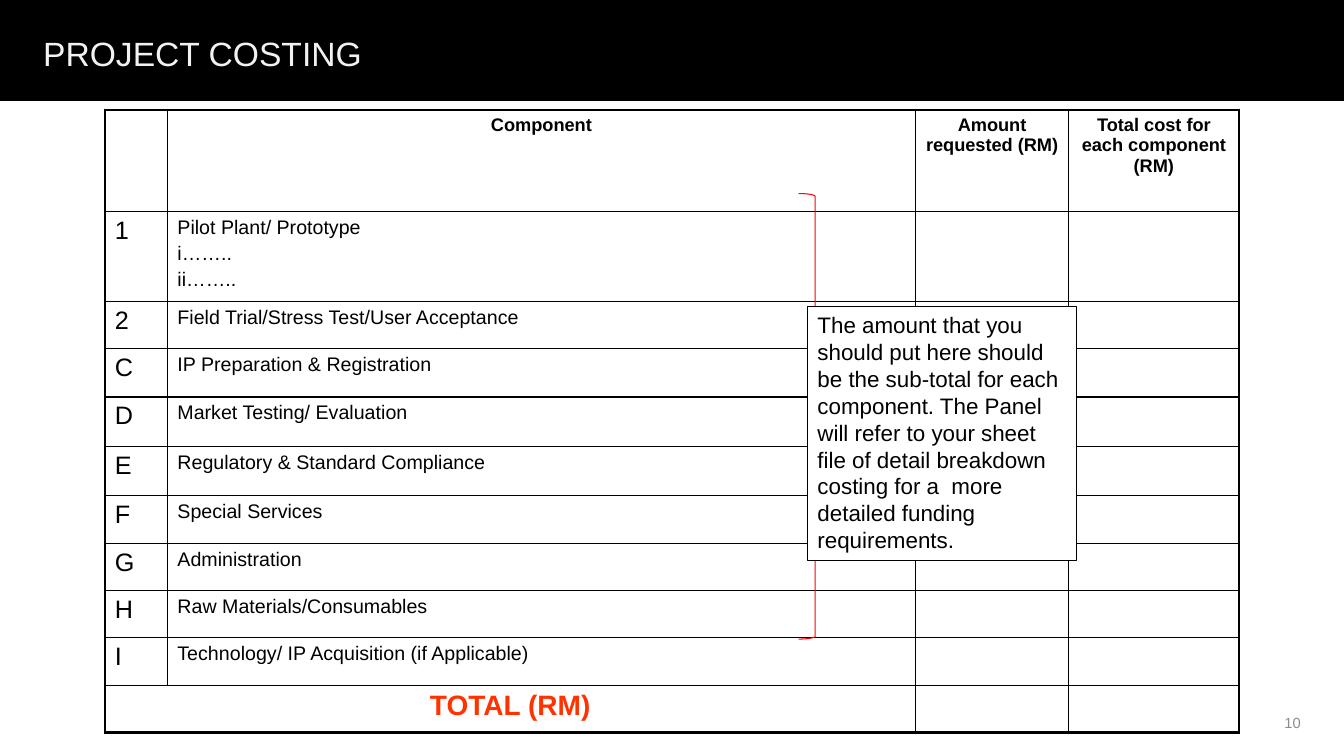
from pptx import Presentation
from pptx.dml.color import RGBColor
from pptx.enum.shapes import MSO_SHAPE as SHAPE
from pptx.enum.text import MSO_ANCHOR as ANCHOR, MSO_AUTO_SIZE as AUTO, PP_ALIGN as ALIGN
from pptx.oxml import parse_xml
from pptx.oxml.ns import nsdecls
from pptx.util import Inches, Pt

COLUMN_WIDTHS = [0.62, 7.42, 1.52, 1.69]
ROW_HEIGHTS = [1.01, 0.89, 0.47, 0.48, 0.49, 0.49] + [0.47] * 5
HEADINGS = ["", "Component", "Amount requested (RM)", "Total cost for each component (RM)"]
COMPONENTS = [
    ("1", "Pilot Plant/ Prototype\ni……..\nii…….."),
    ("2", "Field Trial/Stress Test/User Acceptance"),
    ("C", "IP Preparation & Registration"),
    ("D", "Market Testing/ Evaluation"),
    ("E", "Regulatory & Standard Compliance"),
    ("F", "Special Services"),
    ("G", "Administration"),
    ("H", "Raw Materials/Consumables"),
    ("I", "Technology/ IP Acquisition (if Applicable)"),
]
NOTE = ("The amount that you should put here should be the sub-total for each component. "
        "The Panel will refer to your sheet file of detail breakdown costing for a  more "
        "detailed funding requirements.")


def rgb(color):
    return RGBColor.from_string(color)


def write(tf, text, size=18, color="000000", bold=False, align=ALIGN.LEFT, gap=0):
    for i, line in enumerate(text.split("\n")):
        p = tf.add_paragraph() if i else tf.paragraphs[0]
        p.alignment = align
        if i:
            p.space_before = Pt(gap)
        r = p.add_run()
        r.text = line
        r.font.name = "Arial"
        r.font.size = Pt(size)
        r.font.bold = bold
        r.font.color.rgb = rgb(color)


def add_shape(s, kind, box, line, width=0.75, fill=None):
    sp = s.shapes.add_shape(kind, *map(Inches, box))
    sp.shadow.inherit = False
    sp.line.color.rgb = rgb(line)
    sp.line.width = Pt(width)
    if fill:
        sp.fill.solid()
        sp.fill.fore_color.rgb = rgb(fill)
    else:
        sp.fill.background()
    return sp


def add_text(s, box, text, anchor=ANCHOR.TOP, auto=AUTO.NONE, **fmt):
    tf = s.shapes.add_textbox(*map(Inches, box)).text_frame
    tf.word_wrap = True
    tf.auto_size = auto
    tf.vertical_anchor = anchor
    write(tf, text, **fmt)


def set_borders(cell, outer):
    tc_pr = cell._tc.get_or_add_tcPr()
    for side in "LRTB":
        width = Pt(2.25 if side in outer else 1)
        tc_pr.append(parse_xml(
            f'<a:ln{side} {nsdecls("a")} w="{int(width)}"><a:solidFill>'
            f'<a:srgbClr val="000000"/></a:solidFill></a:ln{side}>'))
    cell.fill.background()


def add_cost_table(s):
    rows, cols = len(ROW_HEIGHTS), len(COLUMN_WIDTHS)
    box = (1.04, 1.09, sum(COLUMN_WIDTHS), sum(ROW_HEIGHTS))
    table = s.shapes.add_table(rows, cols, *map(Inches, box)).table
    table.first_row = table.horz_banding = False
    for column, width in zip(table.columns, COLUMN_WIDTHS):
        column.width = Inches(width)
    for row, height in zip(table.rows, ROW_HEIGHTS):
        row.height = Inches(height)
    for i in range(rows):
        for j in range(cols):
            edges = {"L": j == 0, "R": j == cols - 1, "T": i == 0, "B": i == rows - 1}
            set_borders(table.cell(i, j), [side for side, on in edges.items() if on])
    for j, heading in enumerate(HEADINGS):
        if heading:
            write(table.cell(0, j).text_frame, heading, size=13, bold=True, align=ALIGN.CENTER)
    for i, (label, component) in enumerate(COMPONENTS, 1):
        write(table.cell(i, 0).text_frame, label)
        write(table.cell(i, 1).text_frame, component, size=14, gap=2.8)
    total = table.cell(rows - 1, 0)
    total.merge(table.cell(rows - 1, 1))
    write(total.text_frame, "TOTAL (RM)", size=20, color="FF3300", bold=True, align=ALIGN.CENTER)


def add_note(s):
    brace = add_shape(s, SHAPE.RIGHT_BRACE, (7.92, 1.92, 0.33, 4.42), "FF0000")
    brace.adjustments[0] = 0.083
    tf = add_shape(s, SHAPE.RECTANGLE, (8.01, 3.04, 2.67, 2.52), "000000", fill="FFFFFF").text_frame
    tf.word_wrap = True
    tf.auto_size = AUTO.SHAPE_TO_FIT_TEXT
    tf.vertical_anchor = ANCHOR.TOP
    write(tf, NOTE, size=16)


def main():
    prs = Presentation()
    prs.slide_width, prs.slide_height = Inches(13.33), Inches(7.5)
    s = prs.slides.add_slide(prs.slide_layouts[6])
    add_cost_table(s)
    add_note(s)
    add_shape(s, SHAPE.RECTANGLE, (0, 0, 13.33, 1), "000000", width=1, fill="000000")
    add_text(s, (0.33, 0.28, 11.42, 0.5), "PROJECT COSTING", auto=AUTO.SHAPE_TO_FIT_TEXT,
             size=24, color="F2F2F2")
    add_text(s, (10, 6.97, 3, 0.4), "10", anchor=ANCHOR.MIDDLE,
             size=10.5, color="8C8C8C", align=ALIGN.RIGHT)
    prs.save("out.pptx")


if __name__ == "__main__":
    main()
